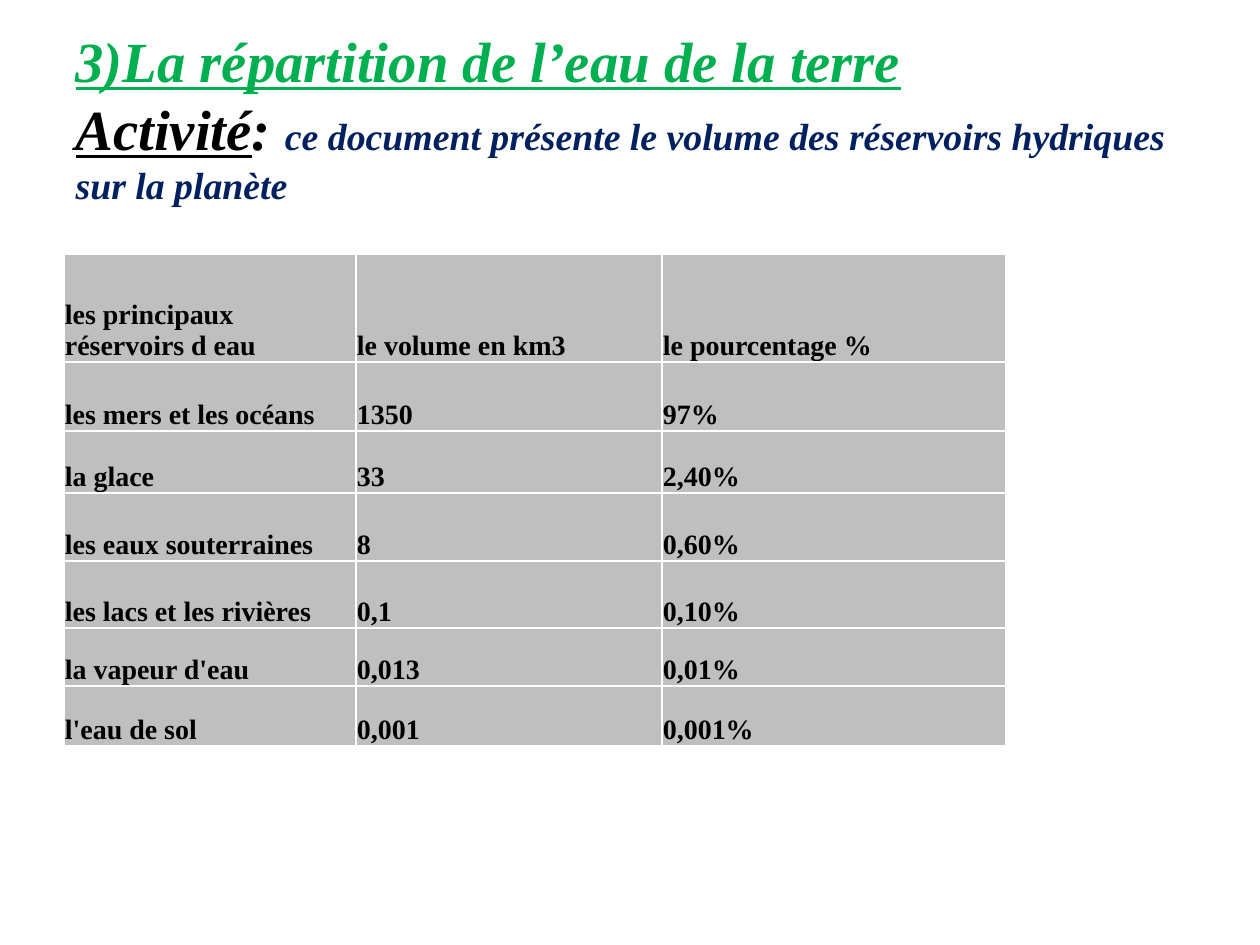
from pptx import Presentation
from pptx import util as u
from pptx.dml.color import RGBColor
from pptx.enum import text

PX = u.Inches(1) / 126
FONT = "Times New Roman"
COLORS = {"green": "00B050", "black": "000000", "navy": "002060", "gray": "BFBFBF"}

TITLE_BOX = (63, 38, 1134, 157)
TITLE_LINES = [
    [("3)La répartition de l’eau de la terre", 32.4, "green", True)],
    [
        ("Activité", 32.4, "black", True),
        (": ", 32.4, "black", False),
        ("ce document présente le volume des réservoirs hydriques sur la planète",
         21.6, "navy", False),
    ],
]

TABLE_LEFT, TABLE_TOP = 64, 254
COLUMN_WIDTHS = [292, 306, 344]
ROW_HEIGHTS = [108, 69, 62, 68, 67, 58, 60]
RESERVOIRS = [
    ("les principaux réservoirs d eau", "le volume en km3", "le pourcentage %"),
    ("les mers et les océans", "1350", "97%"),
    ("la glace", "33", "2,40%"),
    ("les eaux souterraines", "8", "0,60%"),
    ("les lacs et les rivières", "0,1", "0,10%"),
    ("la vapeur d'eau", "0,013", "0,01%"),
    ("l'eau de sol", "0,001", "0,001%"),
]


def px(length):
    return u.Emu(round(length * PX))


def color(name):
    return RGBColor.from_string(COLORS[name])


def fill_title(title):
    title.left, title.top, title.width, title.height = map(px, TITLE_BOX)
    frame = title.text_frame
    frame.word_wrap = True
    frame.auto_size = text.MSO_AUTO_SIZE.NONE
    frame.vertical_anchor = text.MSO_ANCHOR.MIDDLE
    paragraph = frame.paragraphs[0]
    paragraph.alignment = text.PP_ALIGN.LEFT
    for index, line in enumerate(TITLE_LINES):
        if index:
            paragraph.add_line_break()
        for words, size, color_name, underlined in line:
            run = paragraph.add_run()
            run.text = words
            font = run.font
            font.name, font.size = FONT, u.Pt(size)
            font.bold = font.italic = True
            font.underline = underlined
            font.color.rgb = color(color_name)


def fill_cell(cell, words):
    cell.text = words
    cell.fill.solid()
    cell.fill.fore_color.rgb = color("gray")
    cell.vertical_anchor = text.MSO_ANCHOR.BOTTOM
    cell.margin_left = cell.margin_right = cell.margin_top = px(1)
    cell.margin_bottom = 0
    font = cell.text_frame.paragraphs[0].font
    font.name, font.size, font.bold = FONT, u.Pt(16), True
    font.color.rgb = color("black")


def add_reservoir_table(slide):
    table = slide.shapes.add_table(
        len(ROW_HEIGHTS), len(COLUMN_WIDTHS), px(TABLE_LEFT), px(TABLE_TOP),
        px(sum(COLUMN_WIDTHS)), px(sum(ROW_HEIGHTS))).table
    table.first_row = table.horz_banding = False
    for column, width in zip(table.columns, COLUMN_WIDTHS):
        column.width = px(width)
    for row, height, values in zip(table.rows, ROW_HEIGHTS, RESERVOIRS):
        row.height = px(height)
        for cell, words in zip(row.cells, values):
            fill_cell(cell, words)


def main():
    presentation = Presentation()
    presentation.slide_width, presentation.slide_height = px(1260), px(945)
    slide = presentation.slides.add_slide(presentation.slide_layouts[5])
    fill_title(slide.shapes.title)
    add_reservoir_table(slide)
    presentation.save("out.pptx")


if __name__ == "__main__":
    main()
